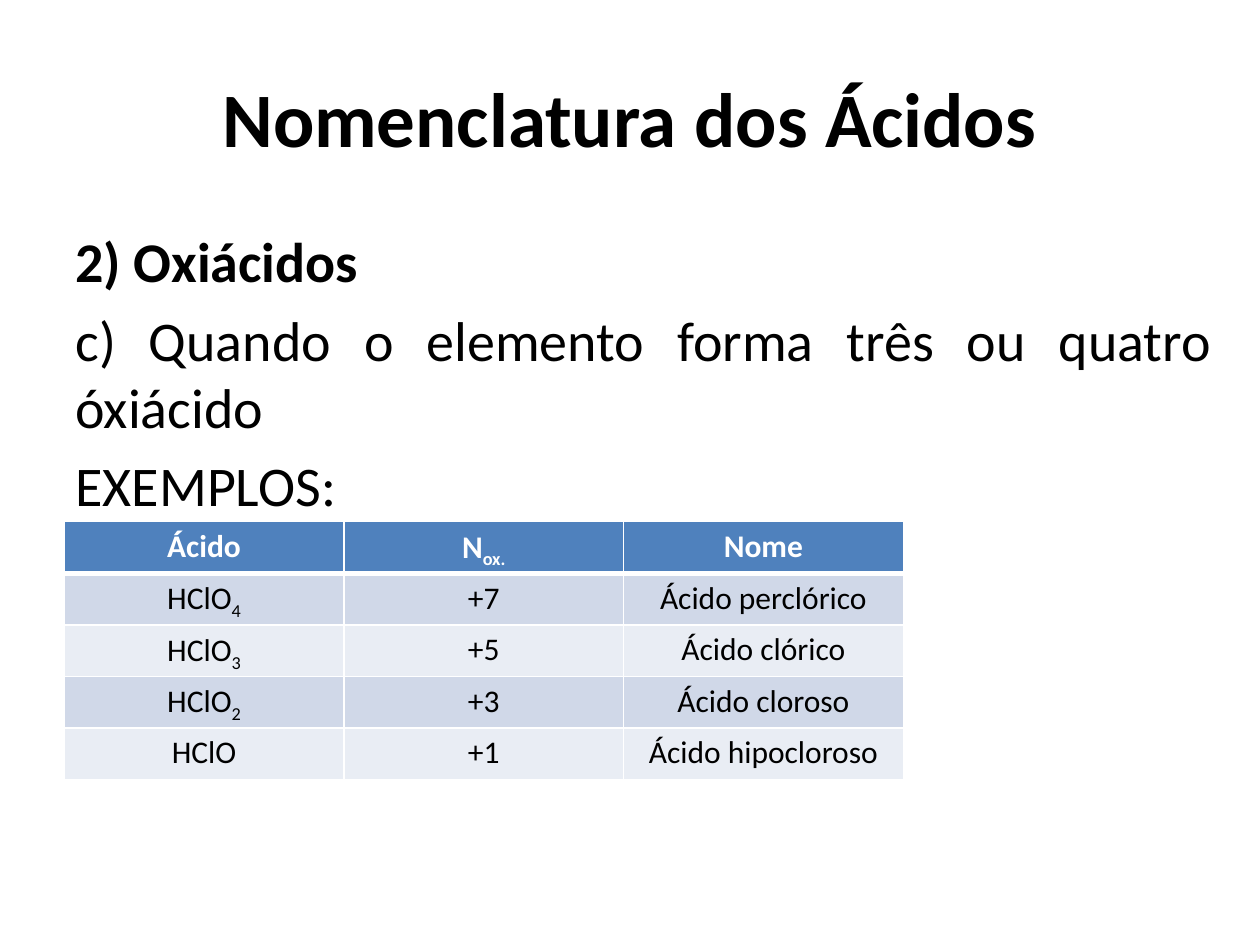
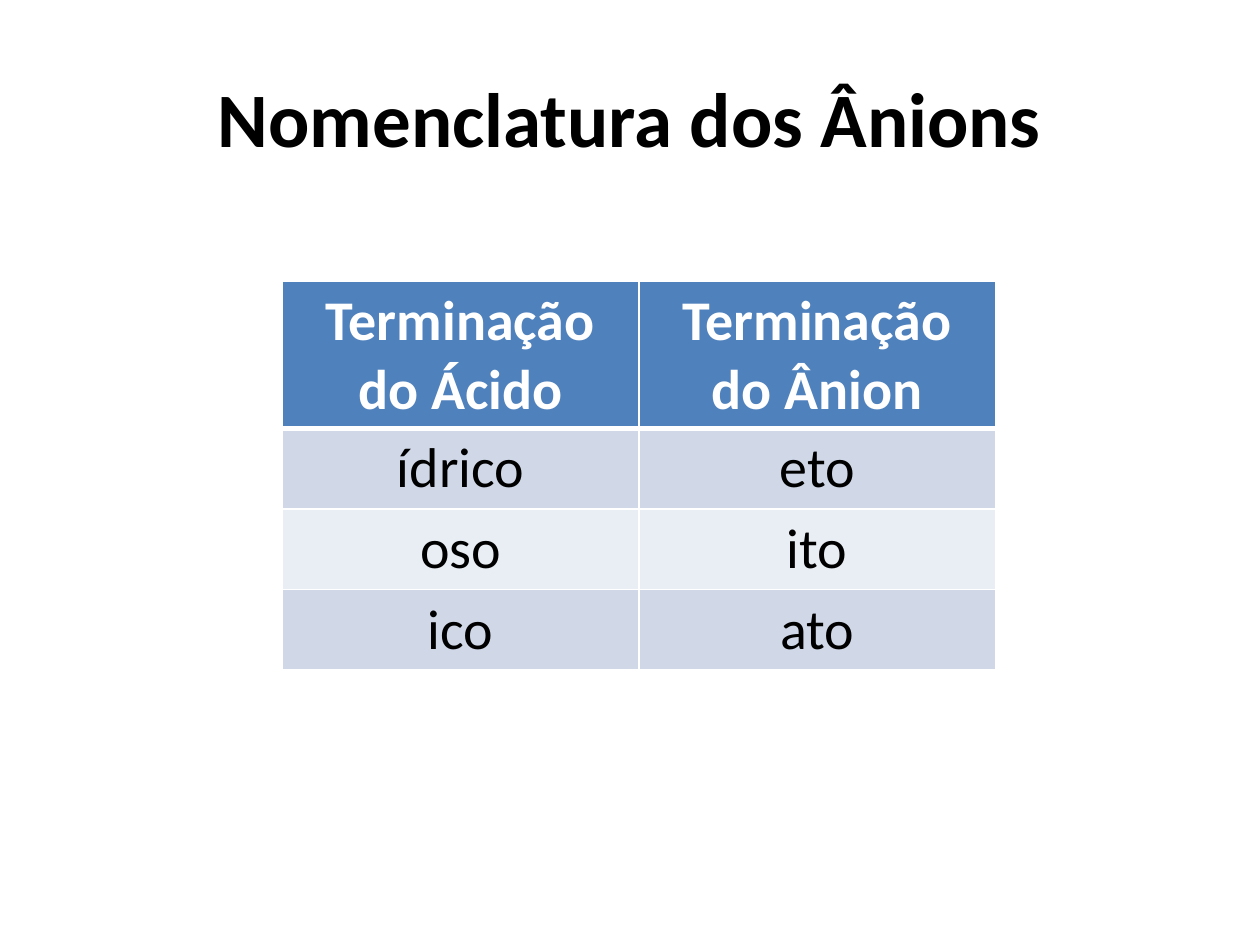
from pptx import Presentation
from pptx.dml.color import RGBColor
from pptx.enum import text as tx
from pptx.oxml.ns import qn
from pptx.util import Inches, Pt
from lxml import etree

FONT = "Calibri"
BLACK = RGBColor(0x00, 0x00, 0x00)
WHITE = RGBColor(0xFF, 0xFF, 0xFF)
BLUE = RGBColor(0x4F, 0x81, 0xBD)
BANDS = RGBColor(0xD0, 0xD8, 0xE8), RGBColor(0xE9, 0xED, 0xF4)
LEFT, MID, JUST = (tx.PP_ALIGN.LEFT, tx.PP_ALIGN.CENTER, tx.PP_ALIGN.JUSTIFY)

# Content: "_" sets what follows it as a subscript
SLIDES = [
    dict(
        title="Nomenclatura dos Ácidos",
        body=[
            ("2) Oxiácidos", True, LEFT),
            ("c) Quando o elemento forma três ou quatro óxiácido", False, JUST),
            ("EXEMPLOS:", False, JUST),
        ],
        rows=[
            ("Ácido", "N_ox.", "Nome"),
            ("HClO_4", "+7", "Ácido perclórico"),
            ("HClO_3", "+5", "Ácido clórico"),
            ("HClO_2", "+3", "Ácido cloroso"),
            ("HClO", "+1", "Ácido hipocloroso"),
        ],
        grid=dict(left=0.51, top=4.14, wide=2.22, head=0.41, high=0.41,
                  size=18, lead=1.15, pad=(0.07, 0)),
    ),
    dict(
        title="Nomenclatura dos Ânions",
        body=[],
        rows=[
            ("Terminação do Ácido", "Terminação do Ânion"),
            ("ídrico", "eto"),
            ("oso", "ito"),
            ("ico", "ato"),
        ],
        grid=dict(left=2.24, top=2.23, wide=2.83, head=1.17, high=0.64,
                  size=32, lead=1.0, pad=(0.1, 0.05)),
    ),
]


def write(para, words, size, bold, color, align):
    para.alignment = align
    for i, part in enumerate(words.split("_")):
        run = para.add_run()
        run.text = part
        font = run.font
        font.name, font.size, font.bold = FONT, Pt(size), bold
        font.color.rgb = color
        if i:
            font._element.set("baseline", "-25000")


def add_box(slide, left, top, wide, high, anchor):
    box = slide.shapes.add_textbox(*map(Inches, (left, top, wide, high)))
    frame = box.text_frame
    frame.word_wrap = True
    frame.vertical_anchor = anchor
    return frame


def add_title(slide, words):
    frame = add_box(slide, 0.5, 0.3, 9, 1.25, tx.MSO_ANCHOR.MIDDLE)
    write(frame.paragraphs[0], words, 44, True, BLACK, MID)


def add_body(slide, lines):
    frame = add_box(slide, 0.5, 1.75, 9.22, 5.39, tx.MSO_ANCHOR.TOP)
    for i, (words, bold, align) in enumerate(lines):
        para = frame.add_paragraph() if i else frame.paragraphs[0]
        para.space_before = Pt(6.4)
        write(para, words, 32, bold, BLACK, align)


def edge(cell, row):
    # White rules, thick between the header and the first row
    thick = {"lnT": row == 1, "lnB": row == 0}
    props = cell._tc.get_or_add_tcPr()
    for side in ("lnL", "lnR", "lnT", "lnB"):
        width = Pt(3 if thick.get(side) else 1)
        line = etree.SubElement(props, qn("a:" + side), w=str(width))
        fill = etree.SubElement(line, qn("a:solidFill"))
        etree.SubElement(fill, qn("a:srgbClr"), val=str(WHITE))


def add_grid(slide, rows, left, top, wide, head, high, size, lead, pad):
    cols = len(rows[0])
    tall = head + high * (len(rows) - 1)
    table = slide.shapes.add_table(
        len(rows), cols, Inches(left), Inches(top),
        Inches(wide * cols), Inches(tall)).table
    for col in table.columns:
        col.width = Inches(wide)
    for r, row in enumerate(rows):
        top_row = r == 0
        table.rows[r].height = Inches(head if top_row else high)
        for c, words in enumerate(row):
            cell = table.cell(r, c)
            cell.margin_left = cell.margin_right = Inches(pad[0])
            cell.margin_top = cell.margin_bottom = Inches(pad[1])
            edge(cell, r)
            cell.fill.solid()
            cell.fill.fore_color.rgb = BLUE if top_row else BANDS[(r - 1) % 2]
            para = cell.text_frame.paragraphs[0]
            para.line_spacing = lead
            write(para, words, size, top_row, WHITE if top_row else BLACK, MID)


def main():
    deck = Presentation()
    deck.slide_width, deck.slide_height = Inches(10), Inches(7.5)
    for page in SLIDES:
        slide = deck.slides.add_slide(deck.slide_layouts[6])
        add_title(slide, page["title"])
        if page["body"]:
            add_body(slide, page["body"])
        add_grid(slide, page["rows"], **page["grid"])
    deck.save("out.pptx")


if __name__ == "__main__":
    main()
